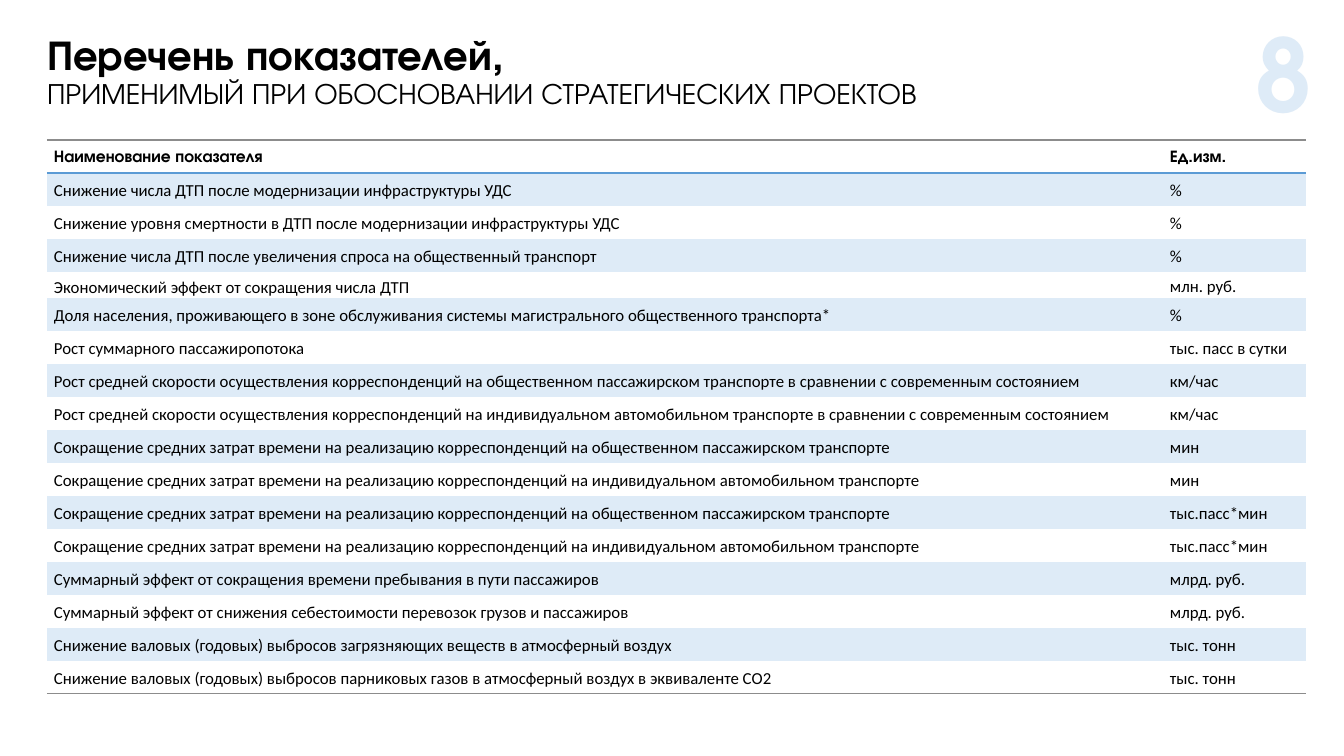
from lxml.etree import SubElement
from pptx import Presentation
from pptx.dml.color import RGBColor
from pptx.enum.text import MSO_ANCHOR, MSO_AUTO_SIZE, PP_ALIGN
from pptx.oxml import parse_xml
from pptx.oxml.ns import nsdecls, qn
from pptx.util import Emu, Pt

BLACK = RGBColor(0x00, 0x00, 0x00)
BLUE = RGBColor(0x5B, 0x9B, 0xD5)
PALE_BLUE = RGBColor(0xDE, 0xEB, 0xF7)
GRAY = RGBColor(0x8C, 0x8C, 0x8C)
HEADING_FONT = "TeX Gyre Adventor"
BODY_FONT = "Calibri"
PX = 914400 / 100.8
NO_STYLE = "{2D5ABB26-0587-4C30-8999-92F81FD0307C}"

ROW_HEIGHT = 33
SHORT_ROW, SHORT_ROW_HEIGHT = 4, 26
SPEED = ("Рост средней скорости осуществления корреспонденций на {} "
         "транспорте в сравнении с современным состоянием")
TIME = "Сокращение средних затрат времени на реализацию корреспонденций на {} транспорте"
PUBLIC = "общественном пассажирском"
PRIVATE = "индивидуальном автомобильном"
INDICATORS = [
    ("Наименование показателя", "Ед.изм."),
    ("Снижение числа ДТП после модернизации инфраструктуры УДС", "%"),
    ("Снижение уровня смертности в ДТП после модернизации инфраструктуры УДС", "%"),
    ("Снижение числа ДТП после увеличения спроса на общественный транспорт", "%"),
    ("Экономический эффект от сокращения числа ДТП", "млн. руб."),
    ("Доля населения, проживающего в зоне обслуживания системы "
     "магистрального общественного транспорта*", "%"),
    ("Рост суммарного пассажиропотока", "тыс. пасс в сутки"),
    (SPEED.format(PUBLIC), "км/час"),
    (SPEED.format(PRIVATE), "км/час"),
    (TIME.format(PUBLIC), "мин"),
    (TIME.format(PRIVATE), "мин"),
    (TIME.format(PUBLIC), "тыс.пасс*мин"),
    (TIME.format(PRIVATE), "тыс.пасс*мин"),
    ("Суммарный эффект от сокращения времени пребывания в пути пассажиров", "млрд. руб."),
    ("Суммарный эффект от снижения себестоимости перевозок грузов и пассажиров", "млрд. руб."),
    ("Снижение валовых (годовых) выбросов загрязняющих веществ в атмосферный воздух",
     "тыс. тонн"),
    ("Снижение валовых (годовых) выбросов парниковых газов в атмосферный воздух "
     "в эквиваленте СО2", "тыс. тонн"),
]


def px(length):
    return Emu(round(length * PX))


class SlideBuilder:
    def __init__(self, presentation):
        self.slide = presentation.slides.add_slide(presentation.slide_layouts[5])

    def format_run(self, run, size, color=BLACK, font=HEADING_FONT, bold=False):
        run.font.size = Pt(size)
        run.font.color.rgb = color
        run.font.name = font
        run.font.bold = bold

    def title(self, left, top, width, height, heading, subheading):
        shape = self.slide.shapes.title
        shape.left, shape.top, shape.width, shape.height = map(px, (left, top, width, height))
        frame = shape.text_frame
        frame.auto_size = MSO_AUTO_SIZE.NONE
        frame.vertical_anchor = MSO_ANCHOR.MIDDLE
        paragraph = frame.paragraphs[0]
        paragraph.text = f"{heading}\v{subheading}"
        paragraph.alignment = PP_ALIGN.LEFT
        paragraph.line_spacing = 0.9
        self.format_run(paragraph.runs[0], 30, bold=True)
        self.format_run(paragraph.runs[1], 21)
        # The line break keeps the height of the heading
        SubElement(paragraph._p.find(qn("a:br")), qn("a:rPr"), sz="3000")

    def page_number(self, left, top, width, height, number):
        shape = self.slide.shapes.add_textbox(*map(px, (left, top, width, height)))
        frame = shape.text_frame
        frame.word_wrap = True
        frame.vertical_anchor = MSO_ANCHOR.MIDDLE
        paragraph = frame.paragraphs[0]
        paragraph.text = number
        paragraph.alignment = PP_ALIGN.RIGHT
        self.format_run(paragraph.runs[0], 72, PALE_BLUE, bold=True)

    def border(self, cell, sides):
        properties = cell._tc.get_or_add_tcPr()
        for position, (side, color) in enumerate(sides):
            properties.insert(position, parse_xml(
                f'<a:{side} w="12700" {nsdecls("a")}><a:solidFill>'
                f'<a:srgbClr val="{color}"/></a:solidFill></a:{side}>'))

    def cell(self, cell, text, header, shaded):
        cell.margin_left = cell.margin_right = px(7)
        cell.margin_top = cell.margin_bottom = 0
        cell.vertical_anchor = MSO_ANCHOR.MIDDLE
        if shaded:
            cell.fill.solid()
            cell.fill.fore_color.rgb = PALE_BLUE
        else:
            cell.fill.background()
        paragraph = cell.text_frame.paragraphs[0]
        paragraph.text = text
        paragraph.line_spacing = 1.15
        font = HEADING_FONT if header else BODY_FONT
        self.format_run(paragraph.runs[0], 12, font=font, bold=header)

    def table(self, left, top, widths, heights, rows):
        frame = self.slide.shapes.add_table(
            len(rows), len(widths), px(left), px(top), px(sum(widths)), px(sum(heights)))
        table = frame.table
        table.first_row = table.horz_banding = False
        table._tbl.tblPr.find(qn("a:tableStyleId")).text = NO_STYLE
        for column, width in zip(table.columns, widths):
            column.width = px(width)
        for index, (row, height, texts) in enumerate(zip(table.rows, heights, rows)):
            row.height = px(height)
            for cell, text in zip(row.cells, texts):
                self.cell(cell, text, header=index == 0, shaded=index % 2 == 1)
                if index == 0:
                    self.border(cell, [("lnT", GRAY), ("lnB", BLUE)])
                elif index == len(rows) - 1:
                    self.border(cell, [("lnB", GRAY)])
        return table


def main():
    presentation = Presentation()
    presentation.slide_width, presentation.slide_height = px(1344), px(756)
    builder = SlideBuilder(presentation)

    # Heading and page number
    builder.page_number(1009, 52, 313, 40, "8")
    builder.title(37, 21, 1262, 103, "Перечень показателей,",
                  "ПРИМЕНИМЫЙ ПРИ ОБОСНОВАНИИ СТРАТЕГИЧЕСКИХ ПРОЕКТОВ")

    # Table of indicators
    heights = [ROW_HEIGHT] * len(INDICATORS)
    heights[SHORT_ROW] = SHORT_ROW_HEIGHT
    table = builder.table(47, 140, [1116, 143], heights, INDICATORS)
    table.cell(SHORT_ROW, 0).vertical_anchor = MSO_ANCHOR.BOTTOM

    presentation.save("out.pptx")


if __name__ == "__main__":
    main()
